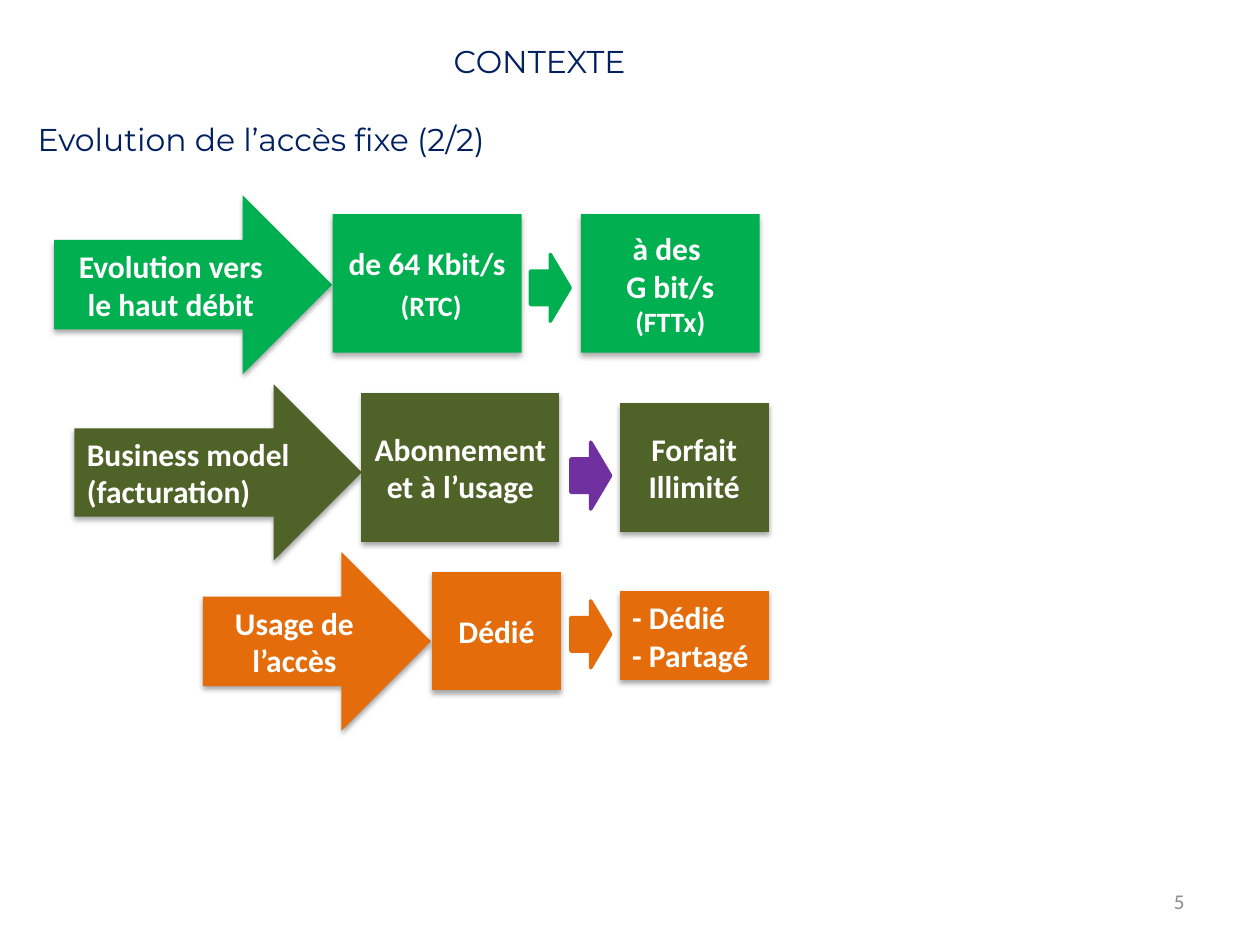
from lxml import etree
from pptx import Presentation
from pptx.dml.color import RGBColor
from pptx.enum import shapes, text
from pptx.oxml import parse_xml
from pptx.oxml.ns import nsdecls, qn
from pptx.util import Pt

COLORS = {"navy": "002060", "green": "00B050", "olive": "4F6228", "orange": "E46C0A",
          "purple": "7030A0", "white": "FFFFFF", "gray": "8C8C8C"}
SHAPE = shapes.MSO_SHAPE
ARROW, RECT, PROCESS = SHAPE.RIGHT_ARROW, SHAPE.RECTANGLE, SHAPE.FLOWCHART_PROCESS
LEFT, CENTER, RIGHT = text.PP_ALIGN.LEFT, text.PP_ALIGN.CENTER, text.PP_ALIGN.RIGHT
TOP, MIDDLE = text.MSO_ANCHOR.TOP, text.MSO_ANCHOR.MIDDLE
BLOCK_SHADOW, RECT_SHADOW = (35, 3.1, 1.8), (32, 3.5, 2.2)

TITLE = "CONTEXTE"
SUBTITLE = "Evolution de l’accès fixe (2/2)"
PAGE_NUMBER = "5"

ROWS = [
    {"color": "green", "box_kind": RECT, "box_shadow": RECT_SHADOW,
     "topic": ((31, 111.6, 158.8, 102.2), [[("Evolution vers le haut débit", 18)]], CENTER),
     "before": ((190.1, 122.4, 108, 79.2),
                [[("de 64 Kbit/s", 18)], [(" ", 20), ("(RTC)", 16)]], CENTER),
     "after": ((331.9, 122.4, 102.2, 79.2),
               [[("à des ", 18)], [("G bit/s ", 18), ("(FTTx)", 16)]], CENTER),
     "step": (303.1, 145.4), "step_color": "green"},
    {"color": "olive", "box_kind": PROCESS, "box_shadow": BLOCK_SHADOW,
     "topic": ((42.5, 219.6, 164.2, 100.8), [[("Business model (facturation)", 18)]], LEFT),
     "before": ((206.6, 224.6, 113, 85), [[("Abonnement", 18)], [("et à l’usage", 18)]], CENTER),
     "after": ((354.2, 230.4, 85, 73.4), [[("Forfait", 18)], [("Illimité", 18)]], CENTER),
     "step": (326.2, 252.7), "step_color": "purple"},
    {"color": "orange", "box_kind": PROCESS, "box_shadow": BLOCK_SHADOW,
     "topic": ((115.9, 315.4, 130.3, 102.2), [[("Usage de l’accès", 18)]], CENTER),
     "before": ((247, 326.9, 73.4, 67.7), [[("Dédié", 18)]], CENTER),
     "after": ((354.2, 337.7, 85, 51.1), [[("- Dédié", 18)], [("- Partagé", 18)]], LEFT),
     "step": (326.2, 343.4), "step_color": "orange"},
]
STEP_SIZE = (22.7, 38.2)


def rgb(name):
    return RGBColor.from_string(COLORS[name])


def place(box, area):
    box.left, box.top, box.width, box.height = map(Pt, area)


def write(box, paragraphs, align, font, color, bold=False, anchor=MIDDLE, wrap=True):
    frame = box.text_frame
    frame.word_wrap = wrap
    frame.auto_size = text.MSO_AUTO_SIZE.NONE
    frame.vertical_anchor = anchor
    for index, spans in enumerate(paragraphs):
        para = frame.add_paragraph() if index else frame.paragraphs[0]
        para.alignment = align
        for content, size in spans:
            span = para.add_run()
            span.text = content
            span.font.size = Pt(size)
            span.font.name = font
            span.font.bold = bold
            span.font.color.rgb = rgb(color)


def add_shadow(box, opacity, blur, distance):
    effects = box._element.spPr.find(qn("a:effectLst"))
    effects.append(parse_xml(
        f'<a:outerShdw {nsdecls("a")} blurRad="{Pt(blur)}" dist="{Pt(distance)}" '
        f'dir="5400000" rotWithShape="0"><a:srgbClr val="000000">'
        f'<a:alpha val="{opacity * 1000}"/></a:srgbClr></a:outerShdw>'))


def add_block(page, kind, area, color):
    box = page.shapes.add_shape(kind, *map(Pt, area))
    box.shadow.inherit = False
    box.fill.solid()
    box.fill.fore_color.rgb = rgb(color)
    box.line.fill.background()
    return box


def add_label(page, kind, color, shadow, area, paragraphs, align):
    box = add_block(page, kind, area, color)
    add_shadow(box, *shadow)
    write(box, paragraphs, align, "Calibri", "white", bold=True)


def add_step(page, position, color):
    box = add_block(page, ARROW, position + STEP_SIZE, color)
    box.line.color.rgb = rgb(color)
    box.line.width = Pt(2)
    etree.SubElement(box.line._ln, qn("a:round"))


def main():
    deck = Presentation()
    deck.slide_width, deck.slide_height = Pt(720), Pt(540)
    page = deck.slides.add_slide(deck.slide_layouts[5])

    place(page.shapes.title, (252, 20.2, 125.3, 28.8))
    write(page.shapes.title, [[(TITLE, 18)]], LEFT, "Montserrat", "navy", anchor=TOP, wrap=False)
    subtitle = page.shapes.add_textbox(*map(Pt, (14.4, 64.8, 414, 28.8)))
    write(subtitle, [[(SUBTITLE, 18)]], LEFT, "Montserrat", "navy", anchor=TOP)

    for row in ROWS:
        add_label(page, ARROW, row["color"], BLOCK_SHADOW, *row["topic"])
        for part in ("before", "after"):
            add_label(page, row["box_kind"], row["color"], row["box_shadow"], *row[part])
        add_step(page, row["step"], row["step_color"])

    number = page.shapes.add_textbox(*map(Pt, (516.2, 500.4, 167.8, 28.8)))
    write(number, [[(PAGE_NUMBER, 12)]], RIGHT, "Calibri", "gray")
    deck.save("out.pptx")


if __name__ == "__main__":
    main()
